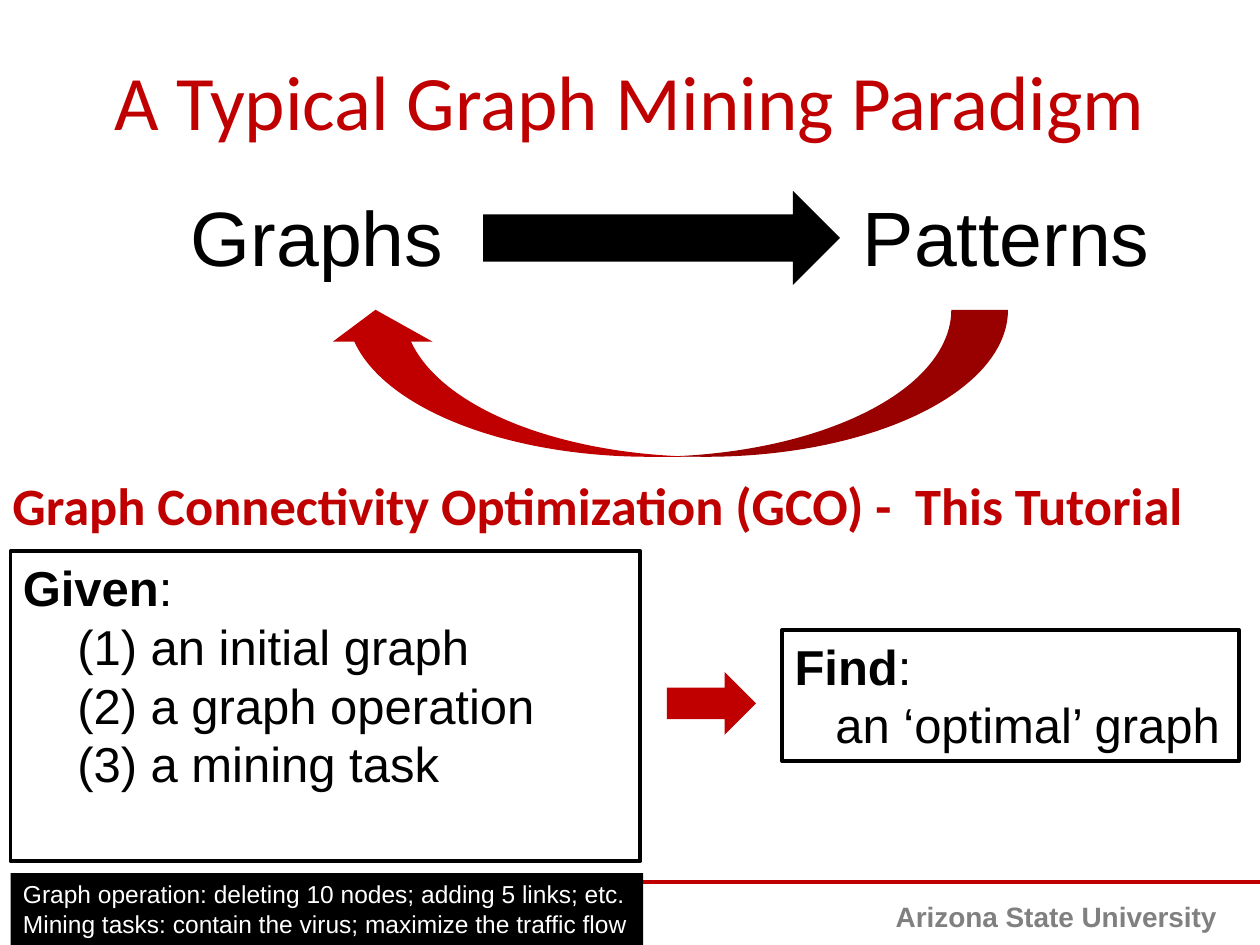
from lxml import etree
from pptx import Presentation
from pptx import util as u
from pptx.dml.color import RGBColor
from pptx.enum import shapes, text
from pptx.oxml.ns import qn

RED, BLACK, WHITE, GRAY = "C00000", "000000", "FFFFFF", "808080"
SHAPE = shapes.MSO_SHAPE
ALIGN = text.PP_ALIGN
ANCHOR = text.MSO_ANCHOR


def color(hex_code):
    return RGBColor.from_string(hex_code)


def paint(fill, hex_code):
    if hex_code:
        fill.solid()
        fill.fore_color.rgb = color(hex_code)
    else:
        fill.background()


def add_block(slide, kind, box, fill=None, border=None):
    block = slide.shapes.add_shape(kind, *map(u.Pt, box))
    block.shadow.inherit = False
    paint(block.fill, fill)
    paint(block.line.fill, border)
    if border:
        block.line.width = u.Pt(2.25)
    return block


def add_rule(slide, start, end):
    rule = slide.shapes.add_connector(
        shapes.MSO_CONNECTOR.STRAIGHT, *map(u.Pt, start + end))
    rule.line.color.rgb = color(RED)
    rule.line.width = u.Pt(2)
    etree.SubElement(rule._element.spPr, qn("a:effectLst"))


def write(holder, lines, size, ink, face="Arial", bold=False,
          align=ALIGN.LEFT, anchor=ANCHOR.TOP):
    frame = holder.text_frame
    for name, value in {"word_wrap": True, "vertical_anchor": anchor}.items():
        setattr(frame, name, value)
    for index, line in enumerate(lines):
        paragraph = frame.add_paragraph() if index else frame.paragraphs[0]
        paragraph.alignment = align
        paragraph.add_run().text = line
        look = {"name": face, "size": u.Pt(size), "bold": bold}
        for run in paragraph.runs:
            for name, value in look.items():
                setattr(run.font, name, value)
            run.font.color.rgb = color(ink)


def add_label(slide, box, line, size, ink, **look):
    label = slide.shapes.add_textbox(*map(u.Pt, box))
    write(label, [line], size, ink, **look)


def add_task_box(slide, box, heading, items, indent):
    task = add_block(slide, SHAPE.RECTANGLE, box, border=BLACK)
    write(task, [heading] + items, 28, BLACK)
    head, *details = task.text_frame.paragraphs
    head.runs[0].font.bold = True
    colon = head.add_run()
    colon.text = ":"
    for name, value in {"name": "Arial", "size": u.Pt(28), "bold": False}.items():
        setattr(colon.font, name, value)
    colon.font.color.rgb = color(BLACK)
    for detail in details:
        detail._p.get_or_add_pPr().set("marL", str(u.Pt(indent)))


def main():
    deck = Presentation()
    deck.slide_width, deck.slide_height = u.Pt(720), u.Pt(540)
    slide = deck.slides.add_slide(deck.slide_layouts[6])

    add_rule(slide, (72, 504), (720, 504))
    add_label(slide, (354, 510.5, 348.5, 29.5), "Arizona State University",
              16, GRAY, bold=True, align=ALIGN.RIGHT)

    add_block(slide, SHAPE.RIGHT_ARROW, (276, 109, 204, 54), fill=BLACK)
    feedback = add_block(slide, SHAPE.CURVED_DOWN_ARROW,
                         (186, 177, 390, 84), fill=RED)
    feedback.rotation = 180
    for index, ratio in enumerate((0.386, 0.68, 0.217)):
        feedback.adjustments[index] = ratio

    add_label(slide, (36, 12, 648, 90), "A Typical Graph Mining Paradigm",
              44, RED, face="Calibri", align=ALIGN.CENTER, anchor=ANCHOR.MIDDLE)
    add_label(slide, (486, 105, 182, 60.5), "Patterns", 44, BLACK)
    add_label(slide, (102, 105, 162, 60.5), "Graphs", 44, BLACK)
    add_label(slide, (0, 243.5, 720, 90),
              "Graph Connectivity Optimization (GCO) -  This Tutorial",
              30, RED, face="Calibri", bold=True, anchor=ANCHOR.MIDDLE)

    add_task_box(slide, (6, 315, 360, 177), "Given",
                 ["(1) an initial graph", "(2) a graph operation",
                  "(3) a mining task"], 31.1)
    add_task_box(slide, (447, 360, 261, 75), "Find",
                 ["an ‘optimal’ graph"], 23.3)
    add_block(slide, SHAPE.RIGHT_ARROW, (381, 384, 51, 36), fill=RED)

    examples = add_block(slide, SHAPE.RECTANGLE, (6, 499, 361.5, 41), fill=BLACK)
    write(examples,
          ["Graph operation: deleting 10 nodes; adding 5 links; etc.",
           "Mining tasks: contain the virus; maximize the traffic flow"],
          14, WHITE)

    deck.save("out.pptx")


if __name__ == "__main__":
    main()
